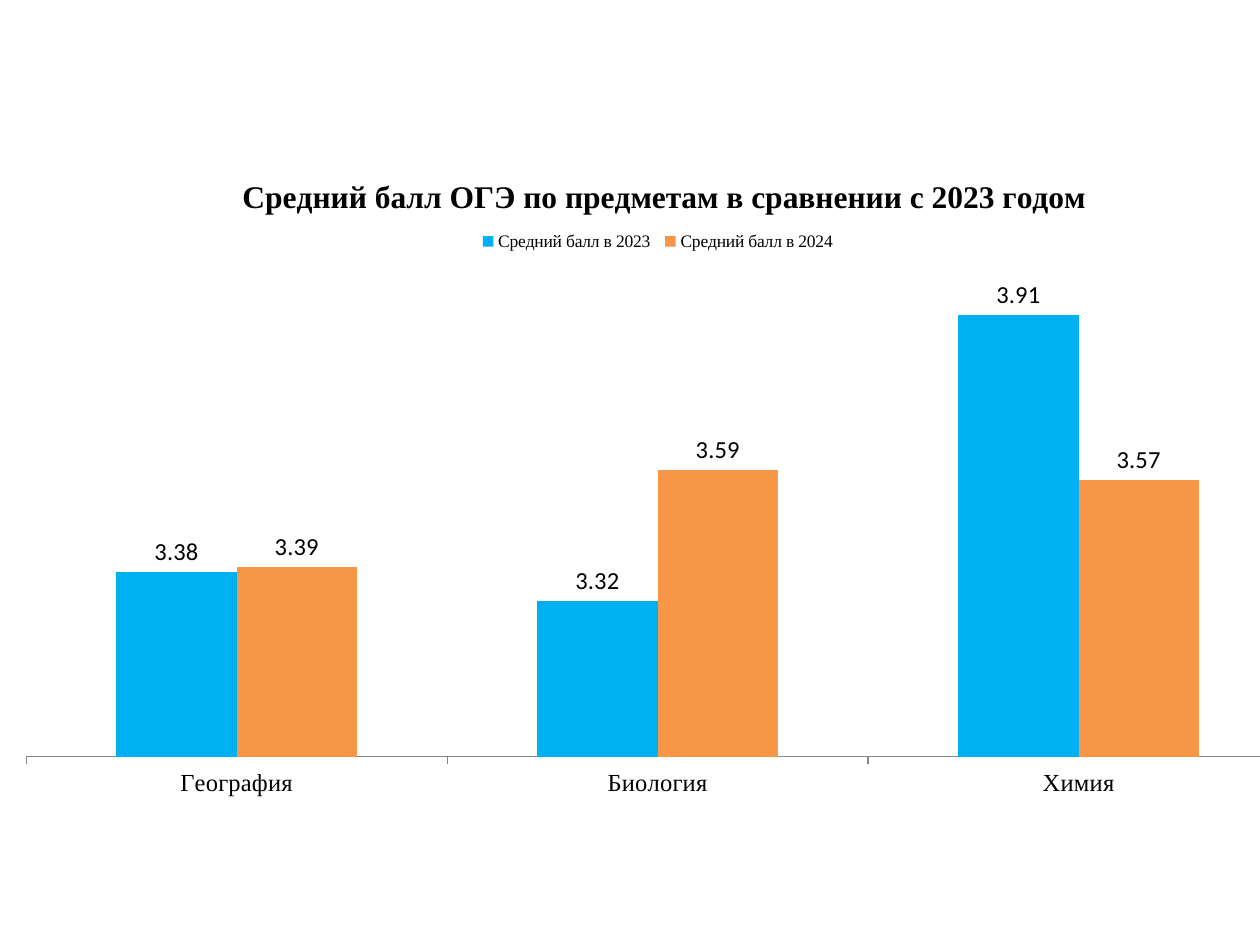
from lxml.etree import SubElement
from pptx import Presentation
from pptx.chart.data import CategoryChartData
from pptx.dml.color import RGBColor
from pptx.enum.chart import XL_CHART_TYPE, XL_LABEL_POSITION, XL_LEGEND_POSITION, XL_TICK_MARK
from pptx.oxml.ns import qn
from pptx.util import Inches, Pt

COLORS = {"text": "000000", "axis": "868686", "2023": "00B0F0", "2024": "F79646"}
SERIF = "Times New Roman"
SUBJECTS = ["География", "Биология", "Химия"]
SCORES = {"2023": [3.38, 3.32, 3.91], "2024": [3.39, 3.59, 3.57]}
TITLE = "Средний балл ОГЭ по предметам в сравнении с 2023 годом"


def rgb(key):
    return RGBColor.from_string(COLORS[key])


def format_font(font, size=10, name="Calibri", bold=False):
    font.size = Pt(size)
    font.name = name
    font.bold = bold
    font.color.rgb = rgb("text")


def write_text(frame, text, **style):
    run = frame.paragraphs[0].add_run()
    run.text = text
    format_font(run.font, **style)


def place(element, target=None, **shares):
    """Fix a chart part's position, in shares of the chart's size."""
    old = element.find(qn("c:layout"))
    if old is not None:
        element.remove(old)
    layout = SubElement(element, qn("c:layout"))
    manual = SubElement(layout, qn("c:manualLayout"))
    if target:
        SubElement(manual, qn("c:layoutTarget")).set("val", target)
    for side in ("x", "y"):
        SubElement(manual, qn(f"c:{side}Mode")).set("val", "edge")
    for side, share in shares.items():
        SubElement(manual, qn(f"c:{side}")).set("val", str(share))
    return layout


def add_score_chart(slide, width, height):
    data = CategoryChartData(number_format="0.00")
    data.categories = SUBJECTS
    for year, scores in SCORES.items():
        data.add_series(f"Средний балл в {year}", scores)
    chart = slide.shapes.add_chart(
        XL_CHART_TYPE.COLUMN_CLUSTERED, 0, Inches(1.15), width, height, data
    ).chart
    format_font(chart.font)
    return chart


def style_title(chart):
    title = chart.chart_title
    write_text(title.text_frame, TITLE, size=18, name=SERIF, bold=True)
    title.include_in_layout = False
    layout = place(title._element, x=0.18, y=0.04)
    title._element.find(qn("c:tx")).addnext(layout)


def style_legend(chart):
    chart.has_legend = True
    legend = chart.legend
    legend.position = XL_LEGEND_POSITION.TOP
    legend.include_in_layout = False
    format_font(legend.font, name=SERIF)
    layout = place(legend._element, x=0.36, y=0.12, w=0.28, h=0.05)
    legend._element.find(qn("c:legendPos")).addnext(layout)


def style_axes(chart):
    subjects, scores = chart.category_axis, chart.value_axis
    subjects.major_tick_mark = XL_TICK_MARK.OUTSIDE
    subjects.format.line.color.rgb = rgb("axis")
    subjects.format.line.width = Pt(0.75)
    format_font(subjects.tick_labels.font, size=14, name=SERIF)
    scores.minimum_scale, scores.maximum_scale = 3, 4
    scores.has_major_gridlines = False
    scores.visible = False


def style_columns(chart):
    plot = chart.plots[0]
    plot.gap_width, plot.overlap = 150, 0
    plot.vary_by_categories = False
    for year, series in zip(SCORES, plot.series):
        series.format.fill.solid()
        series.format.fill.fore_color.rgb = rgb(year)
        labels = series.data_labels
        labels.show_value = True
        labels.number_format, labels.number_format_is_linked = "0.00", False
        labels.position = XL_LABEL_POSITION.OUTSIDE_END
        format_font(labels.font, size=14)
    area = chart._chartSpace.chart.plotArea
    area.insert(0, place(area, "inner", x=0.02, y=0.19, w=0.96, h=0.73))


def main():
    deck = Presentation()
    deck.slide_width, deck.slide_height = Inches(10), Inches(7.5)
    slide = deck.slides.add_slide(deck.slide_layouts[6])
    chart = add_score_chart(slide, Inches(10.44), Inches(5.28))
    for style in (style_title, style_legend, style_axes, style_columns):
        style(chart)
    deck.save("out.pptx")


if __name__ == "__main__":
    main()
